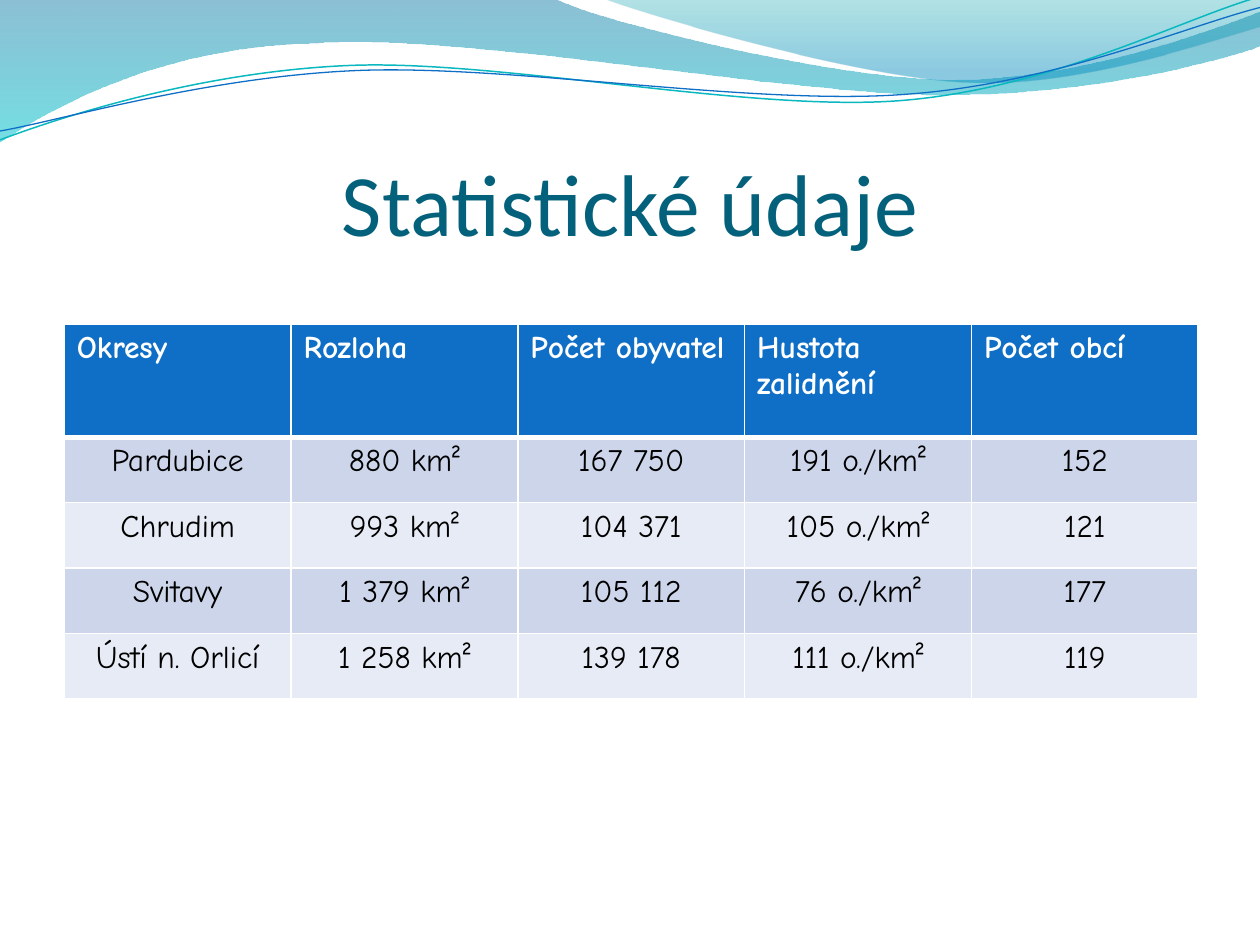
from dataclasses import dataclass
from math import cos, radians, sin

from lxml.etree import SubElement
from pptx import Presentation
from pptx.dml.color import RGBColor
from pptx.enum.text import MSO_ANCHOR, MSO_AUTO_SIZE, PP_ALIGN
from pptx.oxml.ns import qn
from pptx.util import Inches, Pt

# Content
TITLE = "Statistické údaje"
HEADER = ["Okresy", "Rozloha", "Počet obyvatel", "Hustota zalidnění", "Počet obcí"]
DISTRICTS = [
    ["Pardubice", "880 km²", "167 750", "191 o./km²", "152"],
    ["Chrudim", "993 km²", "104 371", "105 o./km²", "121"],
    ["Svitavy", "1 379 km²", "105 112", "76 o./km²", "177"],
    ["Ústí n. Orlicí", "1 258 km²", "139 178", "111 o./km²", "119"],
]


@dataclass(frozen=True)
class Theme:
    title_font: str = "Calibri"
    table_font: str = "Comic Neue"
    title_size: int = 50
    table_size: int = 18
    title: str = "04617B"
    header: str = "0F6FC6"
    bands: tuple = ("CCD5EA", "E7EBF5")
    white: str = "FFFFFF"
    black: str = "000000"
    teal: str = "0AB8BF"


THEME = Theme()
WIDTH, HEIGHT = 10, 7.5
MARGIN = 0.05 * WIDTH
HEADER_HEIGHT, ROW_HEIGHT = 0.9, 0.52
UNITS_PER_INCH = 1000
STRAND_TILT = -2.7
STRAND_CENTER = (5, 0.58)

# Waves: a step of 2 numbers is a straight line, one of 6 a Bezier curve
BANDS = [
    ([(0, 0), (4.4, -0.01), (4.76, 0.17, 6.64, 0.63, 7.58, 0.63),
      (8.53, 0.63, 9.58, 0.26, 10, 0.09), (10.01, 0.36),
      (9.83, 0.44, 8.7, 0.76, 7.46, 0.75), (6.22, 0.75, 3.82, 0.28, 2.57, 0.34),
      (1.29, 0.36, 0.46, 0.83, -0.01, 1.13), (0, 0)],
     [(0, "0074A1", 45), (1, "00C6CF", 55)]),
    ([(4.79, -0.01), (5.09, 0.11, 6.82, 0.62, 7.69, 0.65),
      (8.56, 0.69, 9.61, 0.32, 10, 0.21), (10, 0), (4.79, -0.01)],
     [(0, "00A1A9", 30), (0.8, "008BBF", 45)]),
]
STRANDS = [
    ([(0, 1.11), (0.48, 0.93, 1.58, 0.57, 2.77, 0.52),
      (3.95, 0.47, 5.93, 0.89, 7.13, 0.8), (8.33, 0.71, 9.38, 0.15, 9.98, -0.02)],
     THEME.teal, 0.85),
    ([(0, 1.04), (0.47, 0.96, 1.64, 0.61, 2.83, 0.56),
      (4.03, 0.51, 5.97, 0.84, 7.17, 0.75), (8.36, 0.67, 9.41, 0.21, 10, 0.06)],
     THEME.header, 0.75),
]


def rgb(color):
    return RGBColor.from_string(color)


def level(point):
    """Turn a strand point back to where it lies before the tilt."""
    angle = radians(-STRAND_TILT)
    x, y = (value - middle for value, middle in zip(point, STRAND_CENTER))
    return (STRAND_CENTER[0] + x * cos(angle) - y * sin(angle),
            STRAND_CENTER[1] + x * sin(angle) + y * cos(angle))


def add_wave(slide, steps, closed, tilt=0):
    points = [step[index:index + 2] for step in steps for index in range(0, len(step), 2)]
    if tilt:
        points = [level(point) for point in points]
    points = [tuple(round(value * UNITS_PER_INCH) for value in point) for point in points]
    builder = slide.shapes.build_freeform(*points[0], scale=Inches(1) / UNITS_PER_INCH)
    builder.add_line_segments(points[1:], close=closed)
    shape = builder.convert_to_shape()
    shape.shadow.inherit = False
    shape.rotation = tilt

    # Join every three segments of a curved step into one Bezier curve
    outline = next(shape._element.iter(qn("a:path")))
    segments = iter(outline.findall(qn("a:lnTo")))
    for step in steps[1:]:
        first = next(segments)
        if len(step) == 6:
            curve = SubElement(outline, qn("a:cubicBezTo"))
            first.addprevious(curve)
            for segment in (first, next(segments), next(segments)):
                curve.append(segment[0])
                outline.remove(segment)
    return shape


def add_band(slide, steps, stops):
    shape = add_wave(slide, steps, True)
    shape.line.fill.background()
    shape.fill.gradient()
    shape.fill.gradient_angle = 270
    for stop, (position, color, _) in zip(shape.fill.gradient_stops, stops):
        stop.position = position
        stop.color.rgb = rgb(color)
    for element, (_, _, opacity) in zip(shape._element.iter(qn("a:srgbClr")), stops):
        SubElement(element, qn("a:alpha"), val=str(opacity * 1000))


def add_strand(slide, steps, color, width):
    shape = add_wave(slide, steps, False, STRAND_TILT)
    shape.fill.background()
    shape.line.color.rgb = rgb(color)
    shape.line.width = Pt(width)


def style_runs(paragraph, font, size, color, bold=False):
    for run in paragraph.runs:
        run.font.name = font
        run.font.size = Pt(size)
        run.font.bold = bold
        run.font.color.rgb = rgb(color)


def set_borders(cell, widths):
    properties = cell._tc.get_or_add_tcPr()
    for side, width in zip("LRTB", widths):
        line = SubElement(properties, qn(f"a:ln{side}"), w=str(Pt(width)))
        fill = SubElement(line, qn("a:solidFill"))
        SubElement(fill, qn("a:srgbClr"), val=THEME.white)


def place_title(slide):
    title = slide.shapes.title
    title.left, title.top = Inches(MARGIN), Inches(0.77)
    title.width, title.height = Inches(WIDTH - 2 * MARGIN), Inches(1.25)
    slide.shapes._spTree.append(title._element)  # in front of the waves
    frame = title.text_frame
    frame.text = TITLE
    frame.auto_size = MSO_AUTO_SIZE.NONE
    frame.vertical_anchor = MSO_ANCHOR.BOTTOM
    frame.margin_left = frame.margin_right = frame.margin_bottom = 0
    frame.margin_top = Inches(0.05)
    paragraph = frame.paragraphs[0]
    paragraph.alignment = PP_ALIGN.CENTER
    style_runs(paragraph, THEME.title_font, THEME.title_size, THEME.title)


def add_district_table(slide):
    rows = [HEADER] + DISTRICTS
    table_width = WIDTH - 2 * MARGIN
    table_height = HEADER_HEIGHT + ROW_HEIGHT * len(DISTRICTS)
    table = slide.shapes.add_table(
        len(rows), len(HEADER), Inches(MARGIN + 0.01), Inches(2.57),
        Inches(table_width), Inches(table_height)).table
    for column in table.columns:
        column.width = Inches(table_width / len(HEADER))
    for row_index, values in enumerate(rows):
        is_header = row_index == 0
        table.rows[row_index].height = Inches(HEADER_HEIGHT if is_header else ROW_HEIGHT)
        for column_index, value in enumerate(values):
            cell = table.cell(row_index, column_index)
            cell.text = value
            set_borders(cell, (1, 1, 3 if row_index == 1 else 1, 3 if is_header else 1))
            cell.fill.solid()
            cell.fill.fore_color.rgb = rgb(
                THEME.header if is_header else THEME.bands[(row_index - 1) % 2])
            paragraph = cell.text_frame.paragraphs[0]
            paragraph.alignment = PP_ALIGN.LEFT if is_header else PP_ALIGN.CENTER
            style_runs(paragraph, THEME.table_font, THEME.table_size,
                       THEME.white if is_header else THEME.black, is_header)


def main():
    presentation = Presentation()
    presentation.slide_width, presentation.slide_height = Inches(WIDTH), Inches(HEIGHT)
    slide = presentation.slides.add_slide(presentation.slide_layouts[5])

    # Decorative waves along the top
    for steps, stops in BANDS:
        add_band(slide, steps, stops)
    for steps, color, width in STRANDS:
        add_strand(slide, steps, color, width)

    # Title and statistics
    place_title(slide)
    add_district_table(slide)
    presentation.save("out.pptx")


if __name__ == "__main__":
    main()
